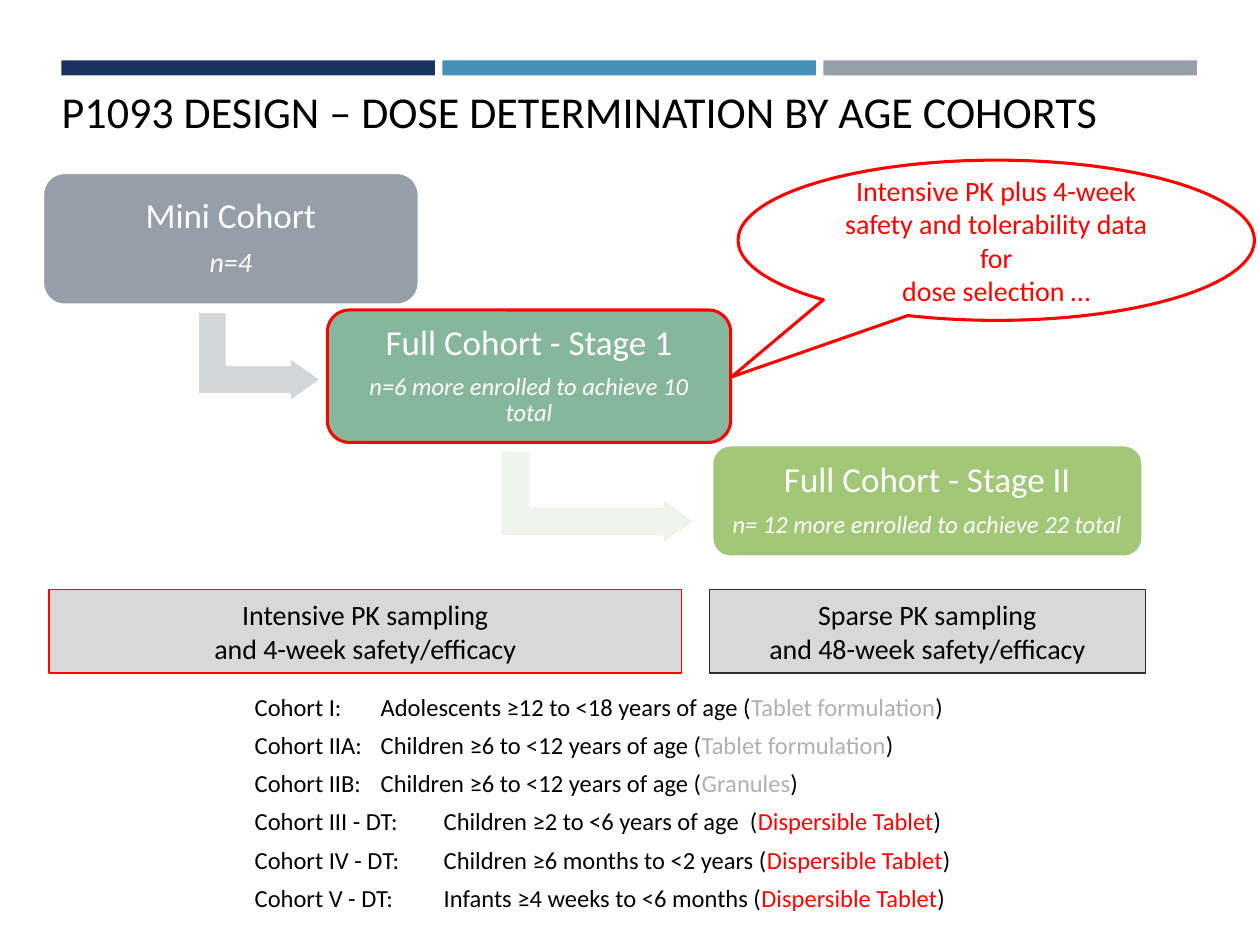
import dataclasses

import pptx
import pptx.dml.color
import pptx.enum.shapes
import pptx.enum.text
import pptx.oxml
import pptx.oxml.ns
import pptx.util

Cm = pptx.util.Cm
Pt = pptx.util.Pt
SHAPE = pptx.enum.shapes.MSO_SHAPE
ANCHOR = pptx.enum.text.MSO_ANCHOR
ALIGN = pptx.enum.text.PP_ALIGN


@dataclasses.dataclass(frozen=True)
class Theme:
    font: str = "Calibri"
    navy: str = "1A3260"
    blue: str = "4590B8"
    slate: str = "969FA7"
    teal: str = "86B79D"
    green: str = "A2C777"
    pale_slate: str = "D3D6D9"
    pale_green: str = "F0F5EC"
    panel: str = "D8D8D8"
    panel_line: str = "2E2E2E"
    red: str = "FF0000"
    muted: str = "B0B0B0"
    black: str = "000000"
    white: str = "FFFFFF"
    title_size: float = 25.2
    heading_size: float = 20
    label_size: float = 16
    body_size: float = 14
    thick: float = 1.75
    thin: float = 0.75


def rgb(color):
    return pptx.dml.color.RGBColor.from_string(color)


def write(paragraph, text, *, font, size, color, italic=False):
    run = paragraph.add_run()
    run.text = text
    run.font.name = font
    run.font.size = Pt(size)
    run.font.italic = italic
    run.font.color.rgb = rgb(color)


def place(shape, box):
    shape.left, shape.top, shape.width, shape.height = map(Cm, box)


def paragraphs(frame, count):
    yield frame.paragraphs[0]
    for _ in range(count - 1):
        yield frame.add_paragraph()


class CohortSlide:
    def __init__(self, slide, theme):
        self.slide = slide
        self.theme = theme

    def shape(self, kind, box, fill=None, line=None, width=0, adjustments=()):
        shape = self.slide.shapes.add_shape(kind, *map(Cm, box))
        shape.shadow.inherit = False
        if fill:
            shape.fill.solid()
            shape.fill.fore_color.rgb = rgb(fill)
        else:
            shape.fill.background()
        if line:
            shape.line.color.rgb = rgb(line)
            shape.line.width = Pt(width)
        else:
            shape.line.fill.background()
        for index, value in enumerate(adjustments):
            shape.adjustments[index] = value
        return shape

    def centred_frame(self, shape, margin=None):
        frame = shape.text_frame
        frame.word_wrap = True
        frame.vertical_anchor = ANCHOR.MIDDLE
        if margin is not None:
            frame.margin_left = frame.margin_right = Cm(margin)
            frame.margin_top = frame.margin_bottom = Cm(margin)
        return frame

    def lines(self, frame, texts, color):
        for paragraph, text in zip(paragraphs(frame, len(texts)), texts):
            paragraph.alignment = ALIGN.CENTER
            write(paragraph, text, font=self.theme.font,
                  size=self.theme.label_size, color=color)

    def title(self, text, box):
        title = self.slide.shapes.title
        place(title, box)
        frame = title.text_frame
        frame.word_wrap = True
        frame.auto_size = pptx.enum.text.MSO_AUTO_SIZE.NONE
        frame.vertical_anchor = ANCHOR.BOTTOM
        frame.paragraphs[0].alignment = ALIGN.LEFT
        write(frame.paragraphs[0], text, font=self.theme.font,
              size=self.theme.title_size, color=self.theme.black)

    def bars(self, colors, left, top, width, height, pitch):
        for column, color in enumerate(colors):
            self.shape(SHAPE.RECTANGLE, (left + column * pitch, top, width, height), color)

    def step_arrow(self, box, fill):
        arrow = self.shape(SHAPE.BENT_UP_ARROW, box, fill, self.theme.white,
                           self.theme.thick, (0.328, 0.25, 0.358))
        arrow.rotation = 90

    def stage(self, heading, detail, box, fill, line, detail_size, gaps):
        card = self.shape(SHAPE.ROUNDED_RECTANGLE, box, fill, line, self.theme.thick, (0.167,))
        frame = self.centred_frame(card, 0.2)
        rows = ((heading, self.theme.heading_size, False), (detail, detail_size, True))
        for paragraph, (text, size, italic), gap in zip(paragraphs(frame, 2), rows, gaps):
            paragraph.alignment = ALIGN.CENTER
            paragraph.line_spacing = 0.9
            paragraph.space_after = Pt(gap)
            write(paragraph, text, font=self.theme.font, size=size,
                  color=self.theme.white, italic=italic)

    def panel(self, texts, box, line):
        panel = self.shape(SHAPE.RECTANGLE, box, self.theme.panel, line, self.theme.thin)
        self.lines(self.centred_frame(panel, 0), texts, self.theme.black)

    def callout(self, texts, box):
        callout = self.shape(SHAPE.OVAL_CALLOUT, box, None, self.theme.red,
                             self.theme.thick, (-0.513, 0.853))
        self.lines(self.centred_frame(callout), texts, self.theme.red)

    def cohort_list(self, cohorts, box, tab):
        body = self.slide.placeholders[1]
        place(body, box)
        frame = body.text_frame
        frame.word_wrap = True
        frame.auto_size = pptx.enum.text.MSO_AUTO_SIZE.NONE
        namespace = pptx.oxml.ns.nsdecls("a")
        for row, (paragraph, cohort) in enumerate(zip(paragraphs(frame, len(cohorts)), cohorts)):
            name, ages, formulation, color = cohort
            paragraph.space_before = Pt(3 if row else 0)
            paragraph.space_after = Pt(2)
            properties = paragraph._p.get_or_add_pPr()
            properties.set("marL", "0")
            properties.set("indent", "0")
            properties.append(pptx.oxml.parse_xml(f"<a:buNone {namespace}/>"))
            properties.append(pptx.oxml.parse_xml(
                f'<a:tabLst {namespace}><a:tab pos="{Cm(tab)}" algn="l"/></a:tabLst>'))
            parts = ((f"{name}:\t{ages} (", self.theme.black),
                     (formulation, color), (")", self.theme.black))
            for text, part_color in parts:
                write(paragraph, text, font=self.theme.font,
                      size=self.theme.body_size, color=part_color)


def main():
    theme = Theme()
    presentation = pptx.Presentation()
    presentation.slide_width = Cm(25.4)
    presentation.slide_height = Cm(19.05)
    page = CohortSlide(presentation.slides.add_slide(presentation.slide_layouts[1]), theme)

    page.bars((theme.navy, theme.blue, theme.slate), 1.24, 1.22, 7.53, 0.3, 7.68)
    page.title("P1093 DESIGN – DOSE DETERMINATION BY AGE COHORTS", (0.99, 0.94, 24.4, 1.96))

    page.step_arrow((4.32, 5.94, 1.83, 2.51), theme.pale_slate)
    page.stage("Mini Cohort", "n=4", (0.86, 3.48, 7.59, 2.67),
               theme.slate, theme.white, theme.label_size, (7, 5.6))
    page.step_arrow((11.1, 8.05, 1.91, 3.96), theme.pale_green)
    page.stage("Full Cohort - Stage 1", "n=6 more enrolled to achieve 10 total",
               (6.6, 6.25, 8.13, 2.67), theme.teal, theme.red, theme.body_size, (6, 6))
    page.stage("Full Cohort - Stage II", "n= 12 more enrolled to achieve 22 total",
               (14.35, 8.97, 8.69, 2.26), theme.green, theme.white, theme.body_size, (7, 5))

    panel_top, panel_height = 11.89, 1.68
    page.panel(("Sparse PK sampling", "and 48-week safety/efficacy"),
               (14.3, panel_top, 8.79, panel_height), theme.panel_line)
    page.panel(("Intensive PK sampling", "and 4-week safety/efficacy"),
               (0.99, panel_top, 12.75, panel_height), theme.red)
    page.callout(("Intensive PK plus 4-week safety and tolerability data for",
                  "dose selection …"), (14.88, 3.23, 10.41, 3.23))

    cohorts = (
        ("Cohort I", "Adolescents ≥12 to <18 years of age", "Tablet formulation", theme.muted),
        ("Cohort IIA", "Children ≥6 to <12 years of age", "Tablet formulation", theme.muted),
        ("Cohort IIB", "Children ≥6 to <12 years of age", "Granules", theme.muted),
        ("Cohort III - DT", "Children ≥2 to <6 years of age ", "Dispersible Tablet", theme.red),
        ("Cohort IV - DT", "Children ≥6 months to <2 years", "Dispersible Tablet", theme.red),
        ("Cohort V - DT", "Infants ≥4 weeks to <6 months", "Dispersible Tablet", theme.red),
    )
    page.cohort_list(cohorts, (4.88, 13.82, 17.3, 4.75), 3.81)
    presentation.save("out.pptx")


if __name__ == "__main__":
    main()
